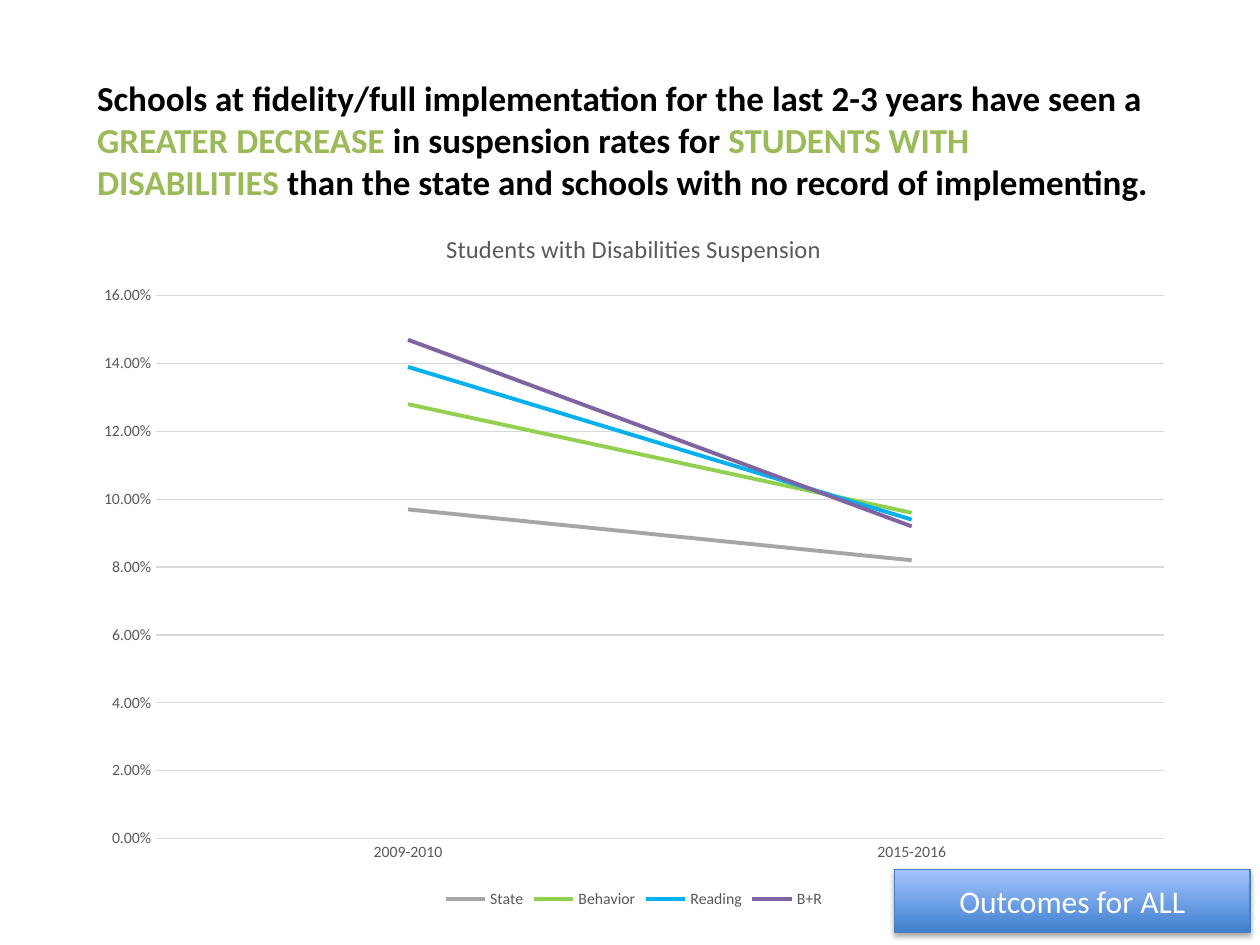
from lxml import etree
from pptx import Presentation
from pptx.chart.data import CategoryChartData
from pptx.dml.color import RGBColor
from pptx.enum.chart import XL_CHART_TYPE, XL_LEGEND_POSITION, XL_TICK_MARK
from pptx.enum.shapes import MSO_SHAPE
from pptx.enum.text import MSO_ANCHOR, PP_ALIGN
from pptx.oxml import parse_xml
from pptx.oxml.ns import nsdecls, qn
from pptx.util import Inches, Pt

LINE, BOTTOM, NO_TICK = XL_CHART_TYPE.LINE, XL_LEGEND_POSITION.BOTTOM, XL_TICK_MARK.NONE
RECT, MIDDLE = MSO_SHAPE.RECTANGLE, MSO_ANCHOR.MIDDLE
LEFT, CENTER = PP_ALIGN.LEFT, PP_ALIGN.CENTER

FONT = "Calibri"
BLACK = RGBColor(0x00, 0x00, 0x00)
WHITE = RGBColor(0xFF, 0xFF, 0xFF)
GREEN = RGBColor(0x9B, 0xBB, 0x59)
GREY = RGBColor(0x59, 0x59, 0x59)
GRID = RGBColor(0xD9, 0xD9, 0xD9)
BADGE_BOTTOM = RGBColor(0x3F, 0x80, 0xCE)
BADGE_TOP = RGBColor(0xA4, 0xC4, 0xFF)
BADGE_LINE = RGBColor(0x4B, 0x7E, 0xBC)

TITLE_RUNS = [
    ("Schools at fidelity/full implementation for the last 2-3 years have seen a ", BLACK),
    ("GREATER DECREASE ", GREEN),
    ("in suspension rates for ", BLACK),
    ("STUDENTS WITH DISABILITIES ", GREEN),
    ("than the state and schools with no record of implementing.", BLACK),
]
YEARS = ["2009-2010", "2015-2016"]
SERIES = [
    ("State", (0.097, 0.082), RGBColor(0xA6, 0xA6, 0xA6)),
    ("Behavior", (0.128, 0.096), RGBColor(0x92, 0xD0, 0x50)),
    ("Reading", (0.139, 0.094), RGBColor(0x00, 0xB0, 0xF0)),
    ("B+R", (0.147, 0.092), RGBColor(0x80, 0x64, 0xA2)),
]


def set_font(font, color, **formats):
    """Apply the slide font, a colour and any further font attributes."""
    for name, value in {"name": FONT, **formats}.items():
        setattr(font, name, value)
    font.color.rgb = color


def set_line(line, color, width):
    """Give a line a colour and a width in points."""
    line.color.rgb = color
    line.width = Pt(width)


def fill_title(slide, box):
    """Place the title placeholder in the box and write its coloured runs."""
    title = slide.shapes.title
    title.left, title.top, title.width, title.height = box
    tf = title.text_frame
    margins = dict.fromkeys(
        ("margin_left", "margin_right", "margin_top", "margin_bottom"), Inches(0.1))
    for name, value in {**margins, "word_wrap": True, "vertical_anchor": MIDDLE}.items():
        setattr(tf, name, value)
    p = tf.paragraphs[0]
    p.alignment = LEFT
    for text, color in TITLE_RUNS:
        r = p.add_run()
        r.text = text
        set_font(r.font, color, size=Pt(20), bold=True)


def add_suspension_chart(slide, box):
    """Draw the line chart of suspension rates in the box."""
    data = CategoryChartData(number_format="0.00%")
    data.categories = YEARS
    for name, values, _ in SERIES:
        data.add_series(name, values)
    chart = slide.shapes.add_chart(LINE, *box, data).chart
    set_font(chart.font, BLACK, size=Pt(10))

    chart.has_title = True
    p = chart.chart_title.text_frame.paragraphs[0]
    r = p.add_run()
    r.text = "Students with Disabilities Suspension"
    set_font(r.font, GREY, size=Pt(14), bold=False)

    chart.has_legend = True
    chart.legend.position = BOTTOM
    chart.legend.include_in_layout = False
    set_font(chart.legend.font, GREY, size=Pt(9))

    for axis in (chart.category_axis, chart.value_axis):
        axis.major_tick_mark = axis.minor_tick_mark = NO_TICK
        set_font(axis.tick_labels.font, GREY, size=Pt(9))
    set_line(chart.category_axis.format.line, GRID, 0.75)
    rates = chart.value_axis
    rates.minimum_scale, rates.maximum_scale, rates.major_unit = 0, 0.16, 0.02
    rates.tick_labels.number_format = "0.00%"
    rates.tick_labels.number_format_is_linked = False
    rates.format.line.fill.background()
    rates.has_major_gridlines = True
    set_line(rates.major_gridlines.format.line, GRID, 0.75)

    plot = chart.plots[0]
    plot.vary_by_categories = False
    for series, (_, _, color) in zip(plot.series, SERIES):
        series.smooth = False
        set_line(series.format.line, color, 2.25)


def add_shadow(shape):
    """Give the shape a soft black shadow that falls straight down."""
    shape.shadow.inherit = False
    effects = shape._element.spPr.find(qn("a:effectLst"))
    shadow = parse_xml(
        f'<a:outerShdw {nsdecls("a")} blurRad="{Pt(3.1)}" dist="{Pt(1.8)}" '
        'dir="5400000" rotWithShape="0"/>')
    color = etree.SubElement(shadow, qn("a:srgbClr"), val=str(BLACK))
    etree.SubElement(color, qn("a:alpha"), val="35000")
    effects.append(shadow)


def add_badge(slide, box):
    """Draw the shaded badge with its centred label in the box."""
    badge = slide.shapes.add_shape(RECT, *box)
    badge.fill.gradient()
    badge.fill.gradient_angle = 90
    stops = badge.fill.gradient_stops
    for stop, position, color in zip(stops, (0, 1), (BADGE_BOTTOM, BADGE_TOP)):
        stop.position = position
        stop.color.rgb = color
    set_line(badge.line, BADGE_LINE, 0.75)
    add_shadow(badge)
    tf = badge.text_frame
    tf.vertical_anchor = MIDDLE
    p = tf.paragraphs[0]
    p.alignment = CENTER
    r = p.add_run()
    r.text = "Outcomes for ALL"
    set_font(r.font, WHITE, size=Pt(18))


def main():
    """Build the slide and save it."""
    prs = Presentation()
    prs.slide_width, prs.slide_height = Inches(10), Inches(7.5)
    slide = prs.slides.add_slide(prs.slide_layouts[5])
    regions = [
        (fill_title, (0.67, 0.5, 8.58, 1.22)),
        (add_suspension_chart, (0.65, 1.64, 8.76, 5.61)),
        (add_badge, (7.1, 6.9, 2.82, 0.5)),
    ]
    for build, box in regions:
        build(slide, [Inches(length) for length in box])
    prs.save("out.pptx")


if __name__ == "__main__":
    main()
